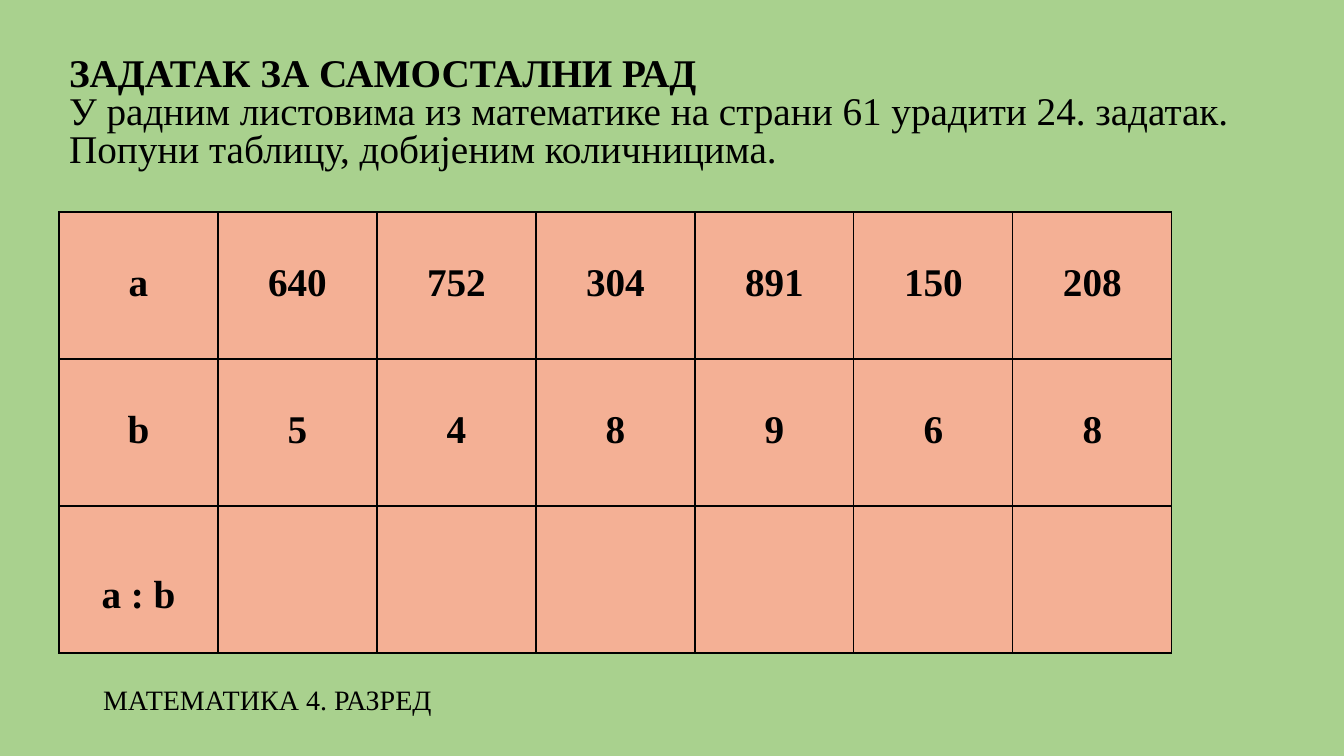
import pptx
import pptx.dml.color
import pptx.enum.text
import pptx.oxml
import pptx.oxml.ns
import pptx.util

COLORS = {"background": "A9D18E", "cell": "F4B095", "ink": "000000"}
FONT = "Times New Roman"
EMU_PER_PX = 12192000 / 1344

HEADING = "ЗАДАТАК ЗА САМОСТАЛНИ РАД\n"
TASK = ("У радним листовима из математике на страни 61 урадити 24. задатак.\n"
        "Попуни таблицу, добијеним количницима.")
SUBJECT = "МАТЕМАТИКА 4. РАЗРЕД"
DIVISIONS = [
    ["a", "640", "752", "304", "891", "150", "208"],
    ["b", "5", "4", "8", "9", "6", "8"],
    ["a : b", "", "", "", "", "", ""],
]
TEXT_OFFSETS = [50, 50, 68]  # top margin of each table row, px


def px(length):
    return pptx.util.Emu(round(length * EMU_PER_PX))


def rgb(name):
    return pptx.dml.color.RGBColor.from_string(COLORS[name])


def write(paragraph, text, size=28, bold=False, align="LEFT"):
    """Add text to a paragraph; a newline becomes a line break."""
    paragraph.alignment = getattr(pptx.enum.text.PP_ALIGN, align)
    for index, line in enumerate(text.split("\n")):
        if index:
            paragraph.add_line_break()
        if line:
            run = paragraph.add_run()
            run.text = line
            run.font.name = FONT
            run.font.size = pptx.util.Pt(size)
            run.font.bold = bold
            run.font.color.rgb = rgb("ink")


class TaskSlide:
    def __init__(self, deck):
        self.slide = deck.slides.add_slide(deck.slide_layouts[0])
        fill = self.slide.background.fill
        fill.solid()
        fill.fore_color.rgb = rgb("background")

    def placeholder(self, index, box, anchor, space_before=0):
        """Place a template placeholder and return its first paragraph."""
        holder = self.slide.placeholders[index]
        holder.left, holder.top, holder.width, holder.height = map(px, box)
        frame = holder.text_frame
        frame.word_wrap = True
        frame.auto_size = pptx.enum.text.MSO_AUTO_SIZE.TEXT_TO_FIT_SHAPE
        frame.vertical_anchor = getattr(pptx.enum.text.MSO_ANCHOR, anchor)
        paragraph = frame.paragraphs[0]
        paragraph.line_spacing = 0.9
        paragraph.space_before = pptx.util.Pt(space_before)
        return paragraph

    def border(self, cell):
        properties = cell._tc.get_or_add_tcPr()
        for side in "LRTB":
            properties.append(pptx.oxml.parse_xml(
                f'<a:ln{side} {pptx.oxml.ns.nsdecls("a")} w="12700"><a:solidFill>'
                f'<a:srgbClr val="{COLORS["ink"]}"/></a:solidFill></a:ln{side}>'))

    def table(self, rows, left, top, column_width, row_height, offsets):
        columns = len(rows[0])
        grid = self.slide.shapes.add_table(
            len(rows), columns, px(left), px(top),
            px(column_width * columns), px(row_height * len(rows))).table
        for column in grid.columns:
            column.width = px(column_width)
        for row, values, offset in zip(grid.rows, rows, offsets):
            row.height = px(row_height)
            for cell, value in zip(row.cells, values):
                self.border(cell)
                cell.fill.solid()
                cell.fill.fore_color.rgb = rgb("cell")
                cell.margin_top = px(offset)
                write(cell.text_frame.paragraphs[0], value, bold=True, align="CENTER")


def main():
    deck = pptx.Presentation()
    deck.slide_width, deck.slide_height = px(1344), px(756)
    page = TaskSlide(deck)

    # Heading and task
    task = page.placeholder(0, (59, 44, 1237, 132), "BOTTOM")
    write(task, HEADING, bold=True)
    write(task, TASK)

    # Division table
    page.table(DIVISIONS, 59, 212, 159, 147, TEXT_OFFSETS)

    # Subject and grade
    subject = page.placeholder(1, (93, 681, 449, 43), "TOP", space_before=10)
    write(subject, SUBJECT, size=20)

    deck.save("out.pptx")


if __name__ == "__main__":
    main()
